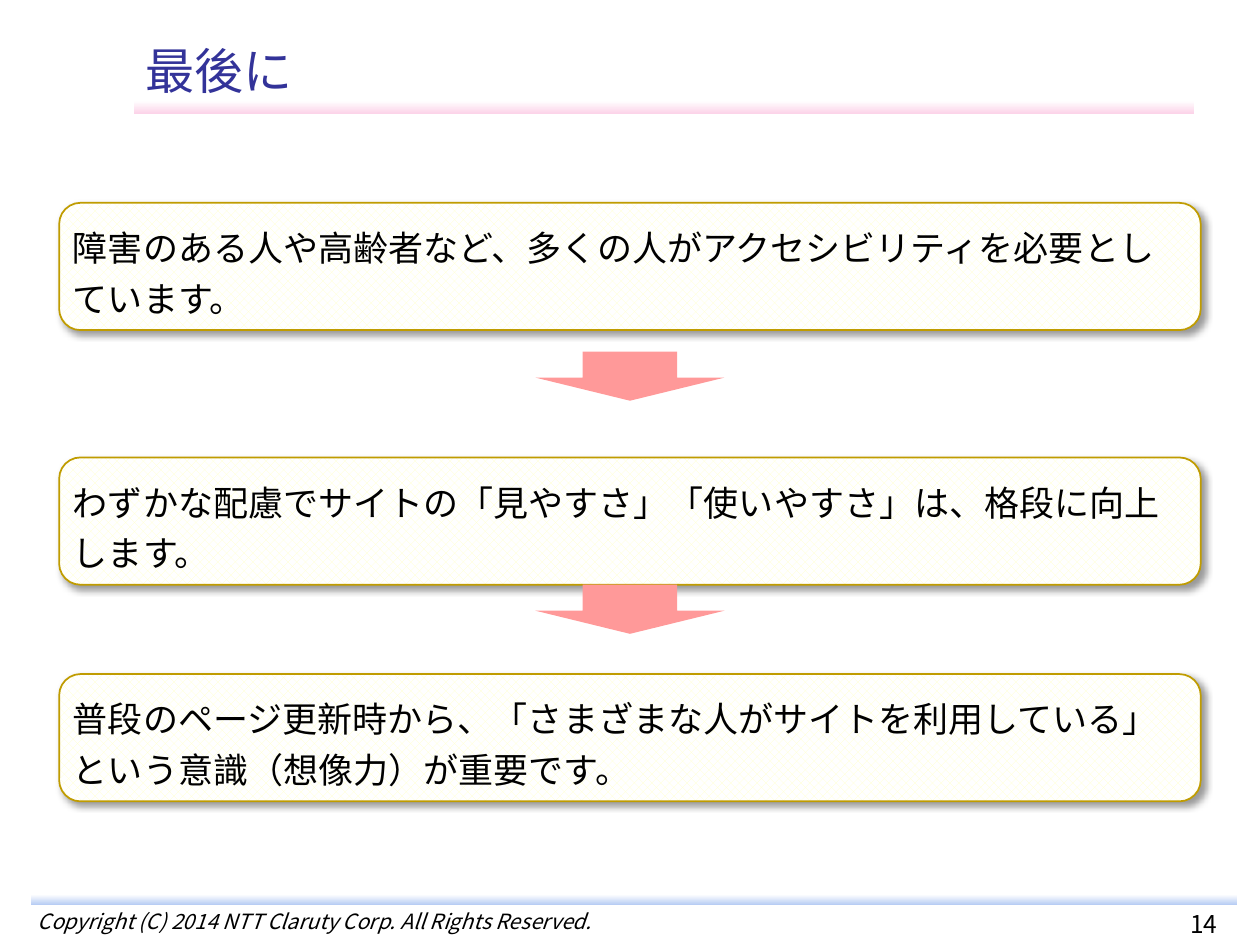
"""Build the closing slide: three messages joined by two arrows."""
from lxml import etree
from pptx import Presentation
from pptx.dml.color import RGBColor
from pptx.enum.dml import MSO_PATTERN
from pptx.enum.shapes import MSO_SHAPE
from pptx.enum.text import MSO_ANCHOR, PP_ALIGN
from pptx.oxml import parse_xml
from pptx.oxml.ns import nsdecls, qn
from pptx.util import Pt

RECTANGLE = MSO_SHAPE.RECTANGLE
ROUNDED = MSO_SHAPE.ROUNDED_RECTANGLE
DOWN_ARROW = MSO_SHAPE.DOWN_ARROW
HALF_TONE = MSO_PATTERN.PERCENT_50
TOP, MIDDLE, BOTTOM = MSO_ANCHOR.TOP, MSO_ANCHOR.MIDDLE, MSO_ANCHOR.BOTTOM
LEFT, CENTER = PP_ALIGN.LEFT, PP_ALIGN.CENTER

FONT = "Noto Sans CJK JP"
BLACK = RGBColor(0x00, 0x00, 0x00)
WHITE = RGBColor(0xFF, 0xFF, 0xFF)
NAVY = RGBColor(0x33, 0x33, 0x99)
BLUE = RGBColor(0xB8, 0xCD, 0xF4)
PINK = RGBColor(0xFC, 0xD4, 0xE9)
CREAM = RGBColor(0xFF, 0xFF, 0xCC)
GOLD = RGBColor(0xC0, 0x9C, 0x00)
SALMON = RGBColor(0xFF, 0x99, 0x99)

SHADOW = (
    f'<a:effectLst {nsdecls("a")}><a:outerShdw blurRad="50800" dist="38100" '
    'dir="2700000" algn="tl" rotWithShape="0"><a:srgbClr val="000000">'
    '<a:alpha val="40000"/></a:srgbClr></a:outerShdw></a:effectLst>'
)


def write(box, text, size, color, anchor, align, insets):
    frame = box.text_frame
    frame.word_wrap = True
    frame.vertical_anchor = anchor
    frame.margin_left = frame.margin_right = Pt(insets[0])
    frame.margin_top, frame.margin_bottom = Pt(insets[1]), Pt(insets[2])
    para = frame.paragraphs[0]
    para.alignment = align
    span = para.add_run()
    span.text = text
    span.font.size = Pt(size)
    span.font.name = FONT
    span.font.color.rgb = color
    east_asian = etree.SubElement(span.font._element, qn("a:ea"))
    east_asian.set("typeface", FONT)
    return para


def add_shape(kind, left, top, width, height):
    shape = page.shapes.add_shape(kind, Pt(left), Pt(top), Pt(width), Pt(height))
    shape.shadow.inherit = False
    shape.line.fill.background()
    return shape


deck = Presentation()
deck.slide_width, deck.slide_height = Pt(720), Pt(540)
page = deck.slides.add_slide(deck.slide_layouts[6])

copyright_box = page.shapes.add_textbox(Pt(15.84), Pt(518.4), Pt(436), Pt(19))
copyright_para = write(
    copyright_box, "Copyright (C) 2014 NTT Claruty Corp. All Rights Reserved.",
    12, BLACK, TOP, LEFT, (5.76, 0.72, 0.72))
copyright_para.runs[0].font.italic = True

for left, top, width, height, color in (
    (18, 511.2, 689, 5.76, BLUE),
    (76.3, 57.6, 606.2, 7.2, PINK),
):
    band = add_shape(RECTANGLE, left, top, width, height)
    band.fill.gradient()
    band.fill.gradient_angle = 270
    for stop, stop_color in zip(band.fill.gradient_stops, (WHITE, color)):
        stop.color.rgb = stop_color

number_box = page.shapes.add_textbox(Pt(619.2), Pt(504), Pt(137.5), Pt(36))
write(number_box, "14", 14, BLACK, BOTTOM, CENTER, (7.2, 3.6, 3.6))

title_box = page.shapes.add_textbox(Pt(76.3), Pt(18.7), Pt(606.2), Pt(42.5))
write(title_box, "最後に", 28, NAVY, MIDDLE, LEFT, (7.2, 3.6, 3.6))

messages = (
    (115.9, "障害のある人や高齢者など、多くの人がアクセシビリティを必要としています。", 200.9),
    (261.4, "わずかな配慮でサイトの「見やすさ」「使いやすさ」は、格段に向上します。", 334.1),
    (385.2, "普段のページ更新時から、「さまざまな人がサイトを利用している」"
            "という意識（想像力）が重要です。", None),
)
for top, text, arrow_top in messages:
    message = add_shape(ROUNDED, 33.84, top, 652.32, 72.7)
    message.fill.patterned()
    message.fill.pattern = HALF_TONE
    message.fill.fore_color.rgb = CREAM
    message.fill.back_color.rgb = WHITE
    message.line.color.rgb = GOLD
    message.line.width = Pt(1)
    properties = message._element.spPr
    properties.replace(properties.find(qn("a:effectLst")), parse_xml(SHADOW))
    para = write(message, text, 20, BLACK, TOP, LEFT, (4.32, 5, 0))
    para.line_spacing = Pt(29)
    if arrow_top is not None:
        arrow = add_shape(DOWN_ARROW, 306, arrow_top, 108, 28.1)
        arrow.adjustments[0], arrow.adjustments[1] = 0.5, 0.47
        arrow.fill.solid()
        arrow.fill.fore_color.rgb = SALMON

deck.save("out.pptx")
